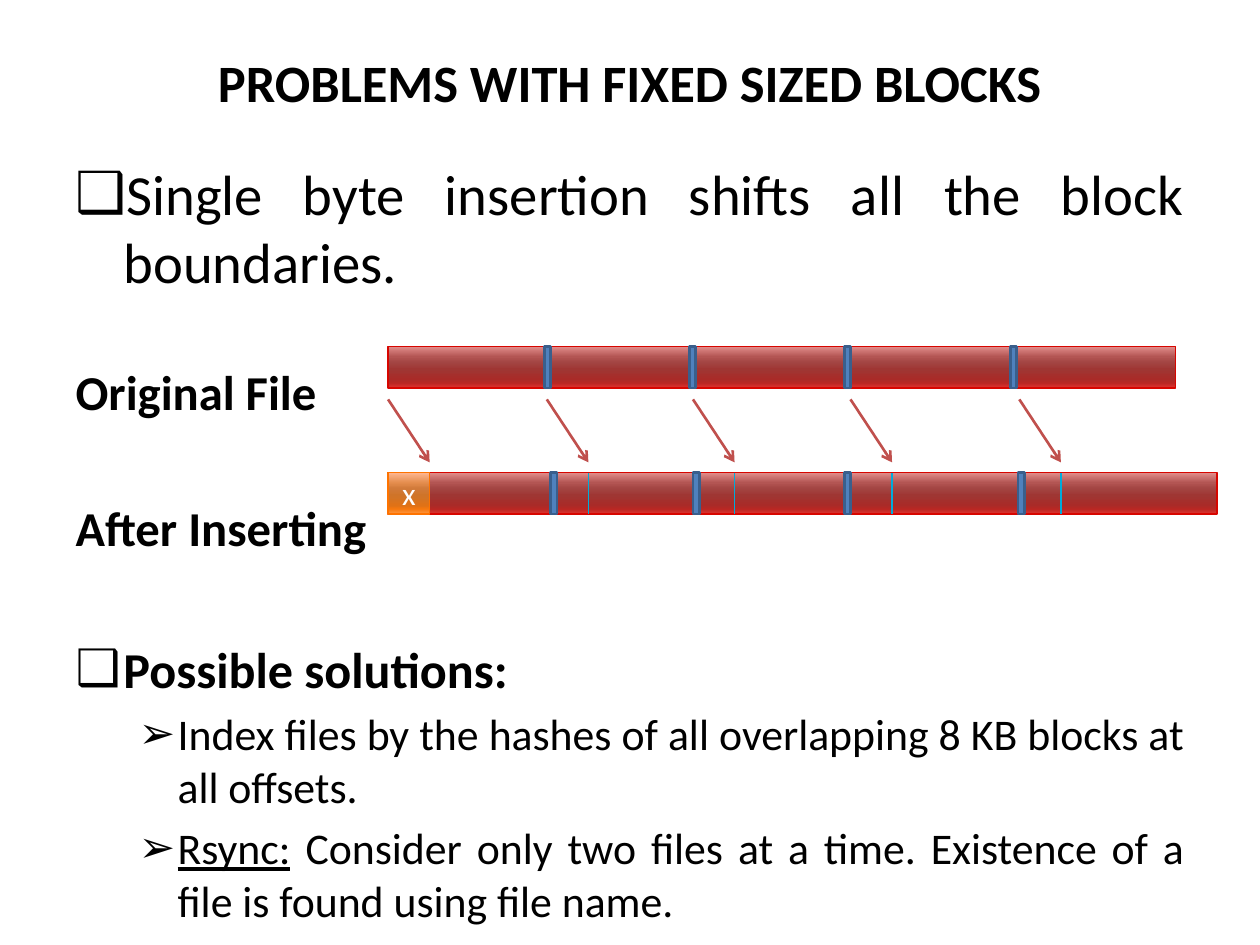
from lxml import etree
from pptx import Presentation
from pptx.dml.color import RGBColor
from pptx.enum.shapes import MSO_CONNECTOR, MSO_SHAPE
from pptx.enum.text import MSO_ANCHOR, MSO_AUTO_SIZE, PP_ALIGN
from pptx.oxml.ns import qn
from pptx.util import Inches, Pt

RECT, STRAIGHT = MSO_SHAPE.RECTANGLE, MSO_CONNECTOR.STRAIGHT
CENTER, JUSTIFY = PP_ALIGN.CENTER, PP_ALIGN.JUSTIFY
MIDDLE, TOP = MSO_ANCHOR.MIDDLE, MSO_ANCHOR.TOP
FONT = "Calibri"
COLORS = {
    "text": "000000", "white": "FFFFFF", "arrow": "C0504D",
    "file_line": "D70600", "insert_line": "FE7300",
    "divider": "4F81BD", "divider_line": "3A5F8C", "old_edge": "00ACDB",
}
STOPS = (0, 25, 38, 55, 80, 88, 100)
FILE_GRADIENT = ("E28E8C", "B35553", "A34543", "9F3633", "A92B28", "B92723", "DF3430")
INSERT_GRADIENT = ("FFB893", "E48D4D", "D17A3A", "CF7429", "DF7217", "F5770E", "FF9640")

TITLE = "PROBLEMS WITH FIXED SIZED BLOCKS"
HEAD = {"bullet": "❑", "left": 0.38, "hang": 0.38}
LABEL = {"left": 0.38, "hang": 0.38, "size": 27.8, "bold": True}
SUB = {"bullet": "➢", "left": 0.81, "hang": 0.31, "size": 25, "level": 1, "before": 5}
BODY = [
    ("Single byte insertion shifts all the block boundaries.", {**HEAD, "size": 32.4}),
    ("Original File", {**LABEL, "before": 38.3}),
    ("After Inserting", {**LABEL, "before": 44.4}),
    ("Possible solutions:", {**HEAD, "size": 28.7, "bold": True, "before": 46.8}),
    ("Index files by the hashes of all overlapping 8 KB blocks at all offsets.", SUB),
    (" Consider only two files at a time. Existence of a file is found using file name.",
     {**SUB, "lead": "Rsync:"}),
]

LEFT, BAR_H, SHIFT = 3.08, 0.33, 0.33
FILES = [  # top, width, divider positions
    (2.75, 6.25, (4.32, 5.47, 6.7, 8.02)),
    (3.75, 6.58, (4.37, 5.5, 6.7, 8.08)),
]
BOUNDARIES = (4.34, 5.5, 6.75, 8.09)
ARROW_TOP, ARROW_BOTTOM = 3.17, 3.67


def rgb(name):
    return RGBColor.from_string(COLORS[name])


def write(p, text, size, bold=False, color="text", align=JUSTIFY, before=0,
          level=0, left=0, hang=0, bullet=None, lead=None):
    """Fill one paragraph; lead is an underlined opening run."""
    p.alignment, p.level, p.space_before = align, level, Pt(before)
    pPr = p._p.get_or_add_pPr()
    pPr.set("marL", str(Inches(left)))
    pPr.set("indent", str(-Inches(hang)))
    if bullet:
        etree.SubElement(pPr, qn("a:buChar")).set("char", bullet)
    else:
        etree.SubElement(pPr, qn("a:buNone"))
    for part in filter(None, (lead, text)):
        r = p.add_run()
        r.text = part
        r.font.name, r.font.size, r.font.bold = FONT, Pt(size), bold
        r.font.underline = part == lead
        r.font.color.rgb = rgb(color)


def place(s, x, y, w, h, anchor):
    s.left, s.top, s.width, s.height = map(Inches, (x, y, w, h))
    tf = s.text_frame
    tf.word_wrap, tf.auto_size, tf.vertical_anchor = True, MSO_AUTO_SIZE.NONE, anchor
    return tf


def add_block(shapes, x, y, w, line, line_w, fill=None, gradient=None):
    sp = shapes.add_shape(RECT, *map(Inches, (x, y, w, BAR_H)))
    sp.shadow.inherit = False
    if gradient:
        sp.fill.gradient()
        sp.fill.gradient_angle = 270
        stops = sp._element.spPr.find(qn("a:gradFill")).find(qn("a:gsLst"))
        for old in list(stops):
            stops.remove(old)
        for pos, color in zip(STOPS, gradient):
            gs = etree.SubElement(stops, qn("a:gs"), pos=str(pos * 1000))
            etree.SubElement(gs, qn("a:srgbClr"), val=color)
    else:
        sp.fill.solid()
        sp.fill.fore_color.rgb = rgb(fill)
    sp.line.color.rgb, sp.line.width = rgb(line), Pt(line_w)
    return sp


def add_line(shapes, x1, y1, x2, y2, color, width, arrow=False):
    c = shapes.add_connector(STRAIGHT, *map(Inches, (x1, y1, x2, y2)))
    c.line.color.rgb, c.line.width = rgb(color), Pt(width)
    if arrow:
        etree.SubElement(c.line._get_or_add_ln(), qn("a:tailEnd"), type="arrow")
    etree.SubElement(c._element.spPr, qn("a:effectLst"))


def main():
    prs = Presentation()
    prs.slide_width, prs.slide_height = Inches(10), Inches(7.5)
    slide = prs.slides.add_slide(prs.slide_layouts[1])
    title, body = slide.placeholders
    shapes = slide.shapes

    tf = place(title, 0.5, 0.3, 9, 0.7, MIDDLE)
    write(tf.paragraphs[0], TITLE, size=30, bold=True, align=CENTER)

    tf = place(body, 0.5, 1, 9, 6.25, TOP)
    tf.margin_top = Inches(0.26)
    for i, (text, fmt) in enumerate(BODY):
        write(tf.add_paragraph() if i else tf.paragraphs[0], text, **fmt)

    for y, width, dividers in FILES:
        add_block(shapes, LEFT, y, width, "file_line", 0.75, gradient=FILE_GRADIENT)
        for x in dividers:
            add_block(shapes, x, y, 0.05, "divider_line", 1.5, fill="divider")

    after_top = FILES[1][0]
    inserted = add_block(shapes, LEFT, after_top, SHIFT, "insert_line", 0.75,
                         gradient=INSERT_GRADIENT)
    inserted.text_frame.vertical_anchor = MIDDLE
    write(inserted.text_frame.paragraphs[0], "x", size=18, color="white", align=CENTER)

    for x in (LEFT, *BOUNDARIES):
        add_line(shapes, x, ARROW_TOP, x + SHIFT, ARROW_BOTTOM, "arrow", 1.5, arrow=True)

    for x in BOUNDARIES:
        edge = x + SHIFT
        add_line(shapes, edge, after_top, edge, after_top + BAR_H, "old_edge", 0.75)

    prs.save("out.pptx")


if __name__ == "__main__":
    main()
